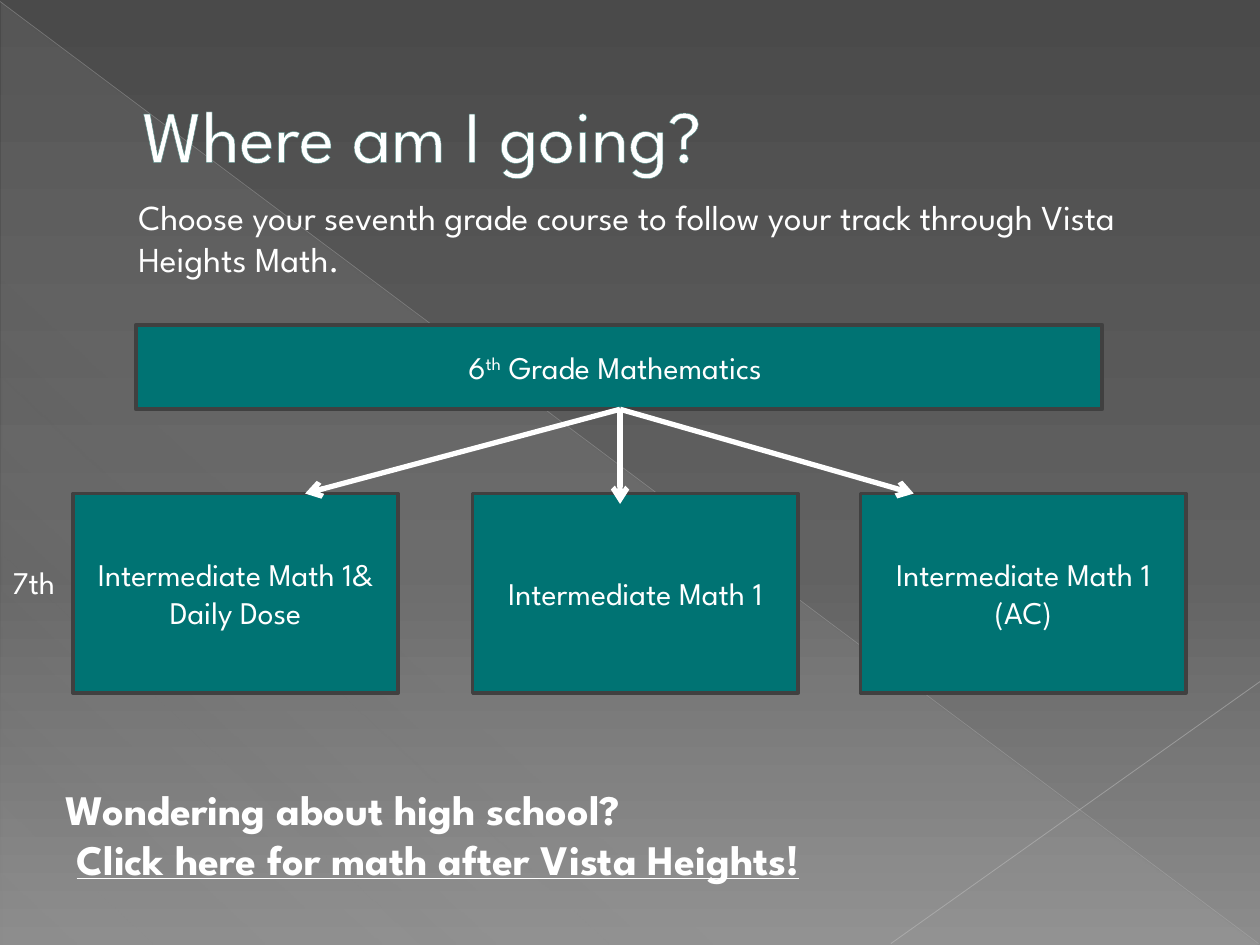
import pptx
import pptx.dml.color
import pptx.enum.shapes
import pptx.enum.text
import pptx.oxml
import pptx.oxml.ns
import pptx.util

Cm, Pt = pptx.util.Cm, pptx.util.Pt
Kind = pptx.enum.shapes.MSO_SHAPE
Align = pptx.enum.text.PP_ALIGN
Mid = pptx.enum.text.MSO_ANCHOR.MIDDLE
qn = pptx.oxml.ns.qn
NS = pptx.oxml.ns.nsdecls("a")

FONT = "League Spartan"
WHITE, TEAL, EDGE = "FFFFFF", "007373", "404040"

# Places are left, top, width, height in cm; gradient stops are position, colour, opacity.
BACK = [(0, "4A4A4A", 100), (60, "626262", 100), (100, "8C8C8C", 100)]
SHADE = [(0, "D2D2D2", 10), (70, "D2D2D2", 8), (100, "D2D2D2", 1)]
WEDGE = (0.03, 0.05, 25.35, 19)
RAYS = [
    ((0, 0.03), (25.37, 19.02), "BFBFBF", 0.39, 35),
    ((25.4, 13.74), (17.96, 19.02), "C6C6C6", 0.47, 45),
]

# Each paragraph is a list of runs: text, font values that differ.
NOTES = [
    ((2.54, 3.81, 20.52, 1.96), {"size": Pt(20)},
     [[("Choose your seventh grade course to follow your track "
        "through Vista Heights Math.", {})]]),
    ((1.07, 15.67, 20.52, 2.31), {"size": Pt(24), "bold": True},
     [[("Wondering about high school?", {})],
      [(" ", {}),
       ("Click here for math after Vista Heights!", {"underline": True})]]),
    ((0, 11.23, 1.7, 1.02), {"size": Pt(18)}, [[("7th", {})]]),
]
TITLE = ((1.27, 0.74, 22.86, 3.89), {"size": Pt(42)}, [[("Where am I going?", {})]])

SIXTH = (2.74, 6.55, 19.48, 1.7)
GRADE = [("6", {}), ("th", {}), (" Grade Mathematics ", {})]
TOP, WIDE, HIGH = 9.95, 6.56, 4.02
COURSES = [
    (1.47, "Intermediate Math 1& Daily Dose"),
    (9.53, "Intermediate Math 1"),
    (17.35, "Intermediate Math 1 (AC)"),
]
START = (12.5, 8.25)
TIPS = [(6.15, TOP), (12.5, 10.16), (18.42, TOP)]


def rgb(code):
    return pptx.dml.color.RGBColor.from_string(code)


def fade(color, part):
    """Set the opacity of a colour element, in percent."""
    node = pptx.oxml.parse_xml(f'<a:alpha {NS} val="{part * 1000}"/>')
    color.append(node)


def blend(fill, root, stops, angle):
    """Give a fill any number of gradient stops."""
    fill.gradient()
    grad = next(root.iter(qn("a:gradFill")))
    for child in list(grad):
        grad.remove(child)
    marks = "".join(
        f'<a:gs pos="{pos * 1000}"><a:srgbClr val="{code}">'
        f'<a:alpha val="{part * 1000}"/></a:srgbClr></a:gs>'
        for pos, code, part in stops)
    grad.append(pptx.oxml.parse_xml(f"<a:gsLst {NS}>{marks}</a:gsLst>"))
    grad.append(pptx.oxml.parse_xml(
        f'<a:lin {NS} ang="{angle * 60000}" scaled="0"/>'))


def write(shape, paras, style, align=Align.LEFT):
    frame = shape.text_frame
    frame.word_wrap = True
    for i, runs in enumerate(paras):
        para = frame.paragraphs[0] if i == 0 else frame.add_paragraph()
        para.alignment = align
        for text, extra in runs:
            run = para.add_run()
            run.text = text
            run.font.color.rgb = rgb(WHITE)
            for key, value in {"name": FONT, **style, **extra}.items():
                setattr(run.font, key, value)
    return frame


def note(slide, place, style, paras):
    box = slide.shapes.add_textbox(*map(Cm, place))
    return write(box, paras, style)


def block(slide, place, runs, width):
    box = slide.shapes.add_shape(Kind.RECTANGLE, *map(Cm, place))
    box.shadow.inherit = False
    box.fill.solid()
    box.fill.fore_color.rgb = rgb(TEAL)
    box.line.color.rgb = rgb(EDGE)
    box.line.width = Pt(width)
    frame = write(box, [runs], {"size": Pt(18)}, Align.CENTER)
    frame.vertical_anchor = Mid
    return frame


def rule(slide, start, end, code, width):
    line = slide.shapes.add_connector(
        pptx.enum.shapes.MSO_CONNECTOR.STRAIGHT, *map(Cm, start + end))
    line.line.color.rgb = rgb(code)
    line.line.width = Pt(width)
    line.element.spPr.append(pptx.oxml.parse_xml(f"<a:effectLst {NS}/>"))
    return line


def scene(slide):
    """Draw the backdrop."""
    blend(slide.background.fill, slide.element, BACK, 90)
    wedge = slide.shapes.add_shape(Kind.RIGHT_TRIANGLE, *map(Cm, WEDGE))
    wedge.shadow.inherit = False
    wedge.line.fill.background()
    blend(wedge.fill, wedge.element, SHADE, 133)
    for start, end, code, width, part in RAYS:
        ray = rule(slide, start, end, code, width)
        fade(next(ray.element.spPr.iter(qn("a:srgbClr"))), part)


def head(slide):
    frame = note(slide, *TITLE)
    frame.vertical_anchor = Mid
    para = frame.paragraphs[0]
    para._p.get_or_add_pPr().set("marL", str(Cm(1.35)))
    para.runs[0]._r.get_or_add_rPr().insert(0, pptx.oxml.parse_xml(
        f'<a:ln {NS} w="{Pt(0.5)}"><a:solidFill><a:srgbClr val="528681"/>'
        "</a:solidFill></a:ln>"))


def chart(slide):
    """Draw the course boxes and the arrows between them."""
    frame = block(slide, SIXTH, GRADE, 2.25)
    frame.paragraphs[0].runs[1]._r.get_or_add_rPr().set("baseline", "30000")
    for left, name in COURSES:
        block(slide, (left, TOP, WIDE, HIGH), [(name, {})], 2)
    for tip in TIPS:
        arrow = rule(slide, START, tip, WHITE, 3)
        arrow.element.spPr.find(qn("a:ln")).append(
            pptx.oxml.parse_xml(f'<a:tailEnd {NS} type="arrow"/>'))


def main():
    deck = pptx.Presentation()
    deck.slide_width, deck.slide_height = Cm(25.4), Cm(19.05)
    slide = deck.slides.add_slide(deck.slide_layouts[6])
    scene(slide)
    head(slide)
    chart(slide)
    for item in NOTES:
        note(slide, *item)
    deck.save("out.pptx")


if __name__ == "__main__":
    main()
